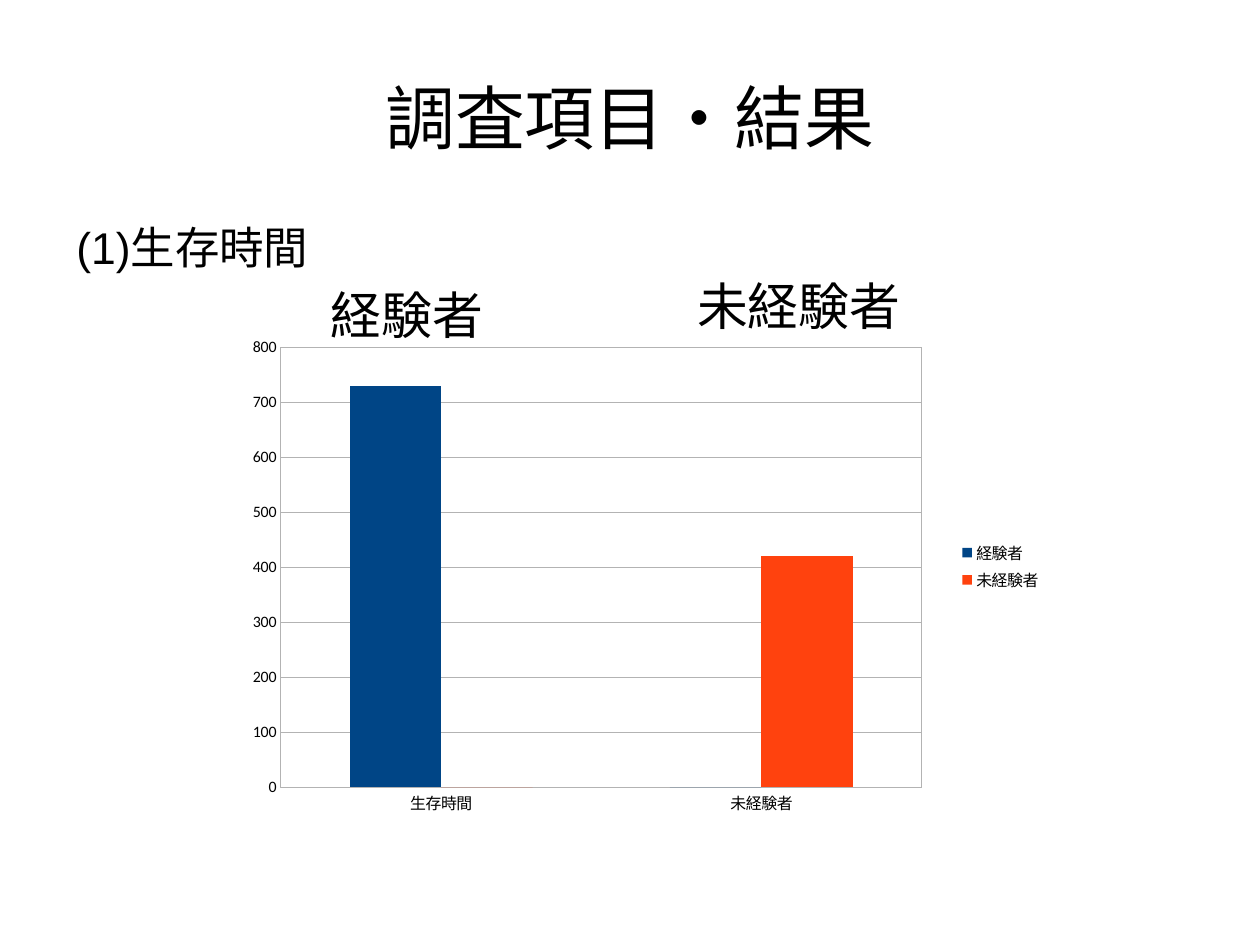
from lxml.etree import fromstring
from pptx import Presentation
from pptx.chart.data import CategoryChartData
from pptx.dml.color import RGBColor
from pptx.enum.chart import XL_CHART_TYPE, XL_LEGEND_POSITION, XL_TICK_MARK
from pptx.enum.text import MSO_ANCHOR, PP_ALIGN
from pptx.util import Cm, Pt

COLORS = {"text": "000000", "line": "B3B3B3",
          "experienced": "004586", "novice": "FF420E"}
NAMESPACES = ('xmlns:c="http://schemas.openxmlformats.org/drawingml/2006/chart" '
              'xmlns:a="http://schemas.openxmlformats.org/drawingml/2006/main"')


def color(name):
    return RGBColor.from_string(COLORS[name])


class SlideBuilder:
    def __init__(self, page, text_font="Arial", chart_font="Calibri"):
        self.page = page
        self.text_font = text_font
        self.chart_font = chart_font

    def text(self, area, words, size, align=PP_ALIGN.CENTER,
             anchor=MSO_ANCHOR.MIDDLE):
        box = self.page.shapes.add_textbox(*map(Cm, area))
        frame = box.text_frame
        frame.word_wrap = True
        frame.vertical_anchor = anchor
        frame.margin_left = frame.margin_right = 0
        frame.margin_top = frame.margin_bottom = 0
        para = frame.paragraphs[0]
        para.alignment = align
        span = para.add_run()
        span.text = words
        span.font.name = self.text_font
        span.font.size = Pt(size)
        span.font.color.rgb = color("text")
        return para

    def item(self, area, words, size):
        para = self.text(area, words, size, PP_ALIGN.LEFT, MSO_ANCHOR.TOP)
        para.space_after = Pt(14.2)
        properties = para._p.get_or_add_pPr()
        properties.set("marL", str(Cm(1.2)))
        properties.set("indent", str(Cm(-0.9)))

    def line(self, target):
        target.format.line.color.rgb = color("line")
        target.format.line.width = Pt(0.75)

    def column_chart(self, area, categories, series, plot_area):
        data = CategoryChartData(number_format="General")
        data.categories = categories
        for name, values, _ in series:
            data.add_series(name, values)
        chart = self.page.shapes.add_chart(
            XL_CHART_TYPE.COLUMN_CLUSTERED, *map(Cm, area), data).chart
        chart.has_title = False
        chart.font.name = self.chart_font
        chart.font.size = Pt(10)
        chart.font.color.rgb = color("text")

        # Columns
        plot = chart.plots[0]
        plot.vary_by_categories = False
        plot.gap_width = 150
        plot.overlap = 0
        for columns, (_, _, fill) in zip(plot.series, series):
            columns.format.fill.solid()
            columns.format.fill.fore_color.rgb = color(fill)

        # Axes and grid
        for axis in (chart.category_axis, chart.value_axis):
            axis.major_tick_mark = axis.minor_tick_mark = XL_TICK_MARK.NONE
            self.line(axis)
        chart.value_axis.minimum_scale = 0
        chart.value_axis.maximum_scale = 800
        chart.value_axis.major_unit = 100
        self.line(chart.value_axis.major_gridlines)

        # Legend
        chart.has_legend = True
        chart.legend.position = XL_LEGEND_POSITION.RIGHT
        chart.legend.include_in_layout = False
        chart.legend.font.size = Pt(10)

        self.place_plot(chart, plot_area)

    def place_plot(self, chart, plot_area):
        root = chart.plots[0]._element.getparent()
        for layout in root.findall("{*}layout"):
            root.remove(layout)
        sizes = "".join(f'<c:{key} val="{value}"/>'
                        for key, value in zip("xywh", plot_area))
        root.insert(0, fromstring(
            f'<c:layout {NAMESPACES}><c:manualLayout>'
            '<c:layoutTarget val="outer"/><c:xMode val="edge"/>'
            f'<c:yMode val="edge"/>{sizes}</c:manualLayout></c:layout>'))
        root.append(fromstring(
            f'<c:spPr {NAMESPACES}><a:noFill/><a:ln w="{Pt(0.75)}"><a:solidFill>'
            f'<a:srgbClr val="{COLORS["line"]}"/></a:solidFill></a:ln></c:spPr>'))


def main():
    deck = Presentation()
    deck.slide_width, deck.slide_height = Cm(28), Cm(21)
    page = deck.slides.add_slide(deck.slide_layouts[6])
    builder = SlideBuilder(page)

    # Heading and item
    builder.text((1.4, 0.84, 25.2, 3.5), "調査項目・結果", 44)
    builder.item((1.4, 4.9, 25.2, 13.87), "(1)生存時間", 28)

    # Survival time chart
    builder.column_chart(
        (4.8, 6.4, 18.6, 12.37),
        ["生存時間", "未経験者"],
        [("経験者", (730, 0), "experienced"),
         ("未経験者", (0, 420), "novice")],
        (0.044, 0.091, 0.799, 0.855))

    # Group labels above the columns
    for left, top, label in ((5.69, 6.2, "経験者"), (14.4, 6, "未経験者")):
        builder.text((left, top, 6.7, 1.55), label, 32)

    deck.save("out.pptx")


if __name__ == "__main__":
    main()
